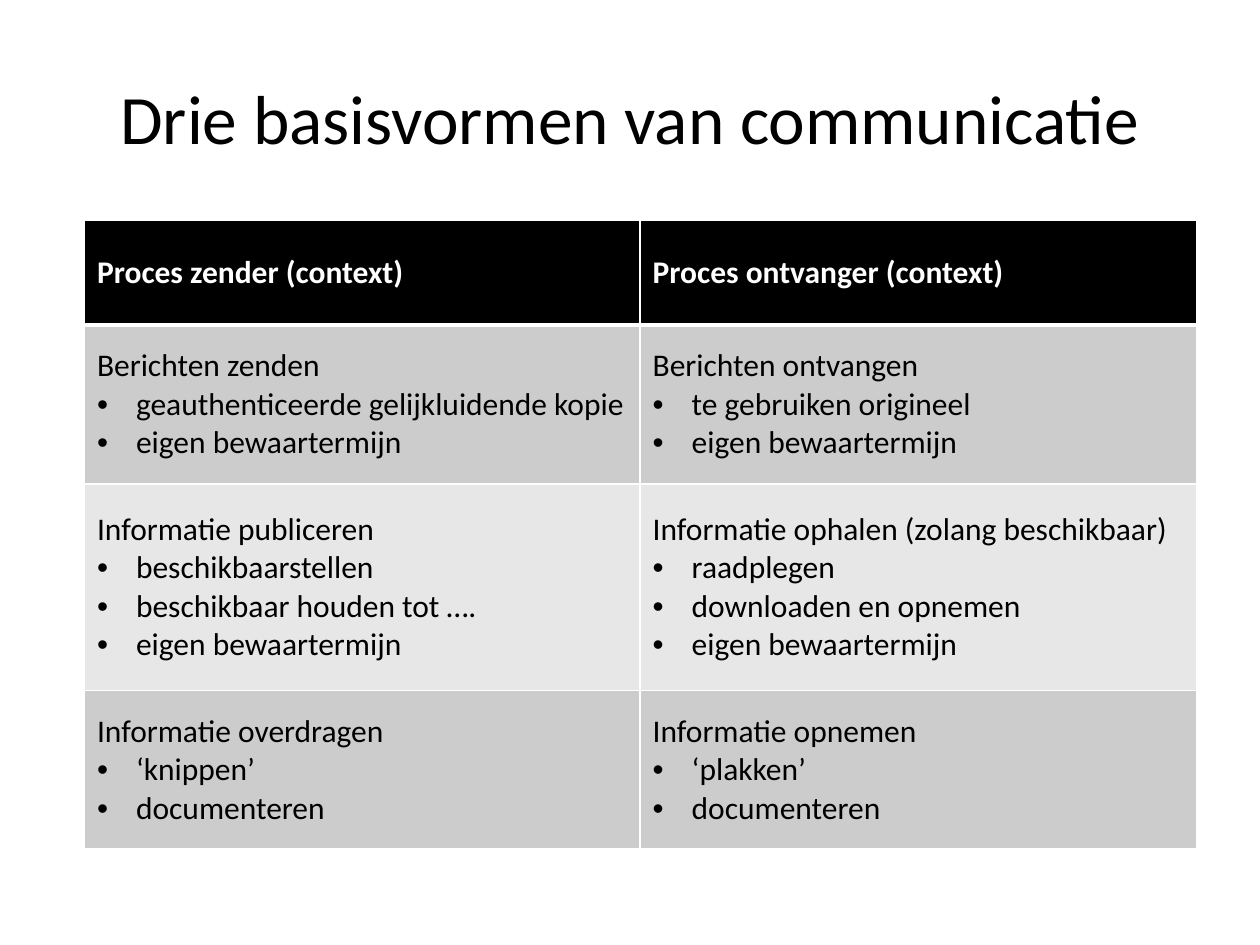
from lxml import etree
from pptx import Presentation
from pptx.dml.color import RGBColor
from pptx.enum import text
from pptx.oxml import ns
from pptx.util import Inches, Pt

TITLE = "Drie basisvormen van communicatie"
WIDTHS = (4.41, 4.42)
HEIGHTS = (0.83, 1.26, 1.64, 1.26)
FILLS = ("000000", "CCCCCC", "E7E7E7", "CCCCCC")
ROWS = (
    (("Proces zender (context)",), ("Proces ontvanger (context)",)),
    (("Berichten zenden", "geauthenticeerde gelijkluidende kopie",
      "eigen bewaartermijn"),
     ("Berichten ontvangen", "te gebruiken origineel",
      "eigen bewaartermijn")),
    (("Informatie publiceren", "beschikbaarstellen",
      "beschikbaar houden tot ….", "eigen bewaartermijn"),
     ("Informatie ophalen (zolang beschikbaar)", "raadplegen",
      "downloaden en opnemen", "eigen bewaartermijn")),
    (("Informatie overdragen", "‘knippen’", "documenteren"),
     ("Informatie opnemen", "‘plakken’", "documenteren")),
)


def color(code):
    """Turn a hex string into a colour."""
    return RGBColor.from_string(code)


def style(font, size, code, bold=False):
    """Set the look of a font."""
    look = {"name": "Calibri", "size": Pt(size), "bold": bold}
    for key, value in look.items():
        setattr(font, key, value)
    font.color.rgb = color(code)


def bullet(para):
    """Give a paragraph a hanging bullet."""
    props = para._p.get_or_add_pPr()
    indent = Inches(0.31)
    props.set("marL", str(indent))
    props.set("indent", str(-indent))
    etree.SubElement(props, ns.qn("a:buFont"), typeface="Arial")
    etree.SubElement(props, ns.qn("a:buChar"), char="•")


def border(cell, top, bottom):
    """Draw white lines on the four sides of a cell."""
    props = cell._tc.get_or_add_tcPr()
    sides = {"L": 1, "R": 1, "T": top, "B": bottom}
    for place, (side, width) in enumerate(sides.items()):
        line = etree.Element(ns.qn(f"a:ln{side}"), w=str(Pt(width)))
        fill = etree.SubElement(line, ns.qn("a:solidFill"))
        etree.SubElement(fill, ns.qn("a:srgbClr"), val="FFFFFF")
        props.insert(place, line)


def write(cell, lines, code, bold):
    """Fill a cell with a lead line and its bullets."""
    frame = cell.text_frame
    frame.text = "\n".join(lines)
    for para in frame.paragraphs:
        style(para.runs[0].font, 18, code, bold)
    for para in frame.paragraphs[1:]:
        bullet(para)


def title(slide):
    """Place and format the title."""
    shape = slide.shapes.title
    area = {"left": 0.5, "top": 0.3, "width": 9, "height": 1.25}
    for key, value in area.items():
        setattr(shape, key, Inches(value))
    frame = shape.text_frame
    frame.text = TITLE
    frame.vertical_anchor = text.MSO_ANCHOR.MIDDLE
    para = frame.paragraphs[0]
    para.alignment = text.PP_ALIGN.CENTER
    style(para.runs[0].font, 39.6, "000000")


def table(slide):
    """Build the table of senders and receivers."""
    area = (0.67, 1.75, sum(WIDTHS), sum(HEIGHTS))
    frame = slide.shapes.add_table(len(ROWS), len(WIDTHS), *map(Inches, area))
    grid = frame.table
    for col, width in zip(grid.columns, WIDTHS):
        col.width = Inches(width)
    for index, (row, height) in enumerate(zip(grid.rows, HEIGHTS)):
        row.height = Inches(height)
        head = index == 0
        for cell, lines in zip(row.cells, ROWS[index]):
            write(cell, lines, "FFFFFF" if head else "000000", head)
            cell.vertical_anchor = text.MSO_ANCHOR.MIDDLE
            cell.fill.solid()
            cell.fill.fore_color.rgb = color(FILLS[index])
            border(cell, 3 if index == 1 else 1, 3 if head else 1)


def main():
    """Build and save the slide."""
    deck = Presentation()
    deck.slide_width, deck.slide_height = Inches(10), Inches(7.5)
    slide = deck.slides.add_slide(deck.slide_layouts[5])
    title(slide)
    table(slide)
    deck.save("out.pptx")


if __name__ == "__main__":
    main()
